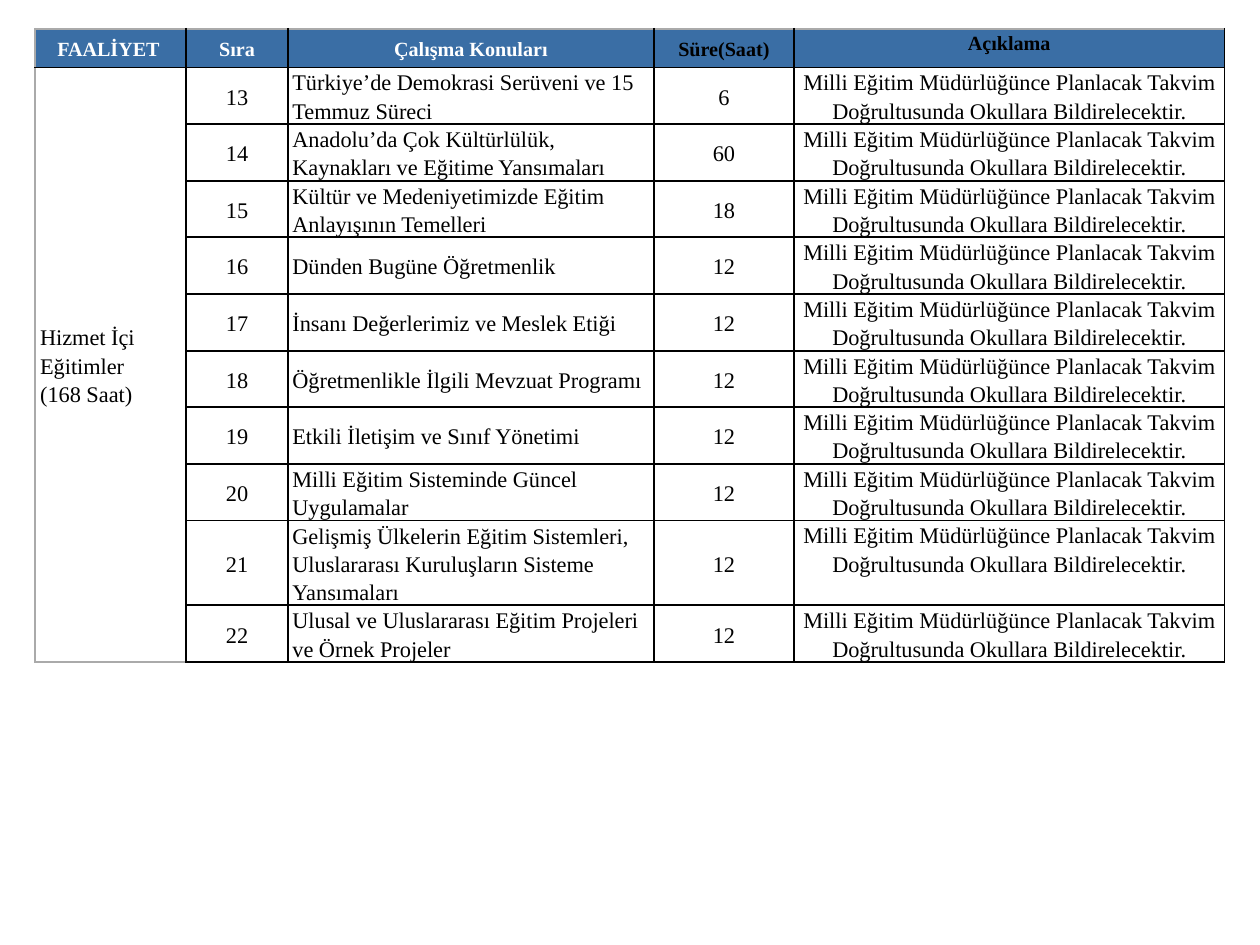
from lxml.etree import SubElement
from pptx import Presentation
from pptx.dml.color import RGBColor
from pptx.enum.text import MSO_ANCHOR, PP_ALIGN
from pptx.oxml.ns import qn
from pptx.util import Inches, Pt

COLORS = {"header": "3A6EA5", "white": "FFFFFF", "black": "000000", "gray": "AAAAAA"}
COLUMN_WIDTHS = [0.94, 0.63, 2.28, 0.87, 2.68]
HEADER_HEIGHT, ROW_HEIGHT, TALL_ROW_HEIGHT = 0.24, 0.35, 0.47
FIRST_NUMBER, TALL_NUMBER = 13, 21
HEADERS = ["FAALİYET\u00a0", "Sıra", "Çalışma Konuları", "Süre(Saat)", "Açıklama"]
ACTIVITY = "Hizmet İçi Eğitimler\n(168 Saat)"
NOTE = "Milli Eğitim Müdürlüğünce Planlacak Takvim Doğrultusunda Okullara Bildirelecektir."
TOPICS = [
    ("Türkiye’de Demokrasi Serüveni ve 15 Temmuz Süreci", 6),
    ("Anadolu’da Çok Kültürlülük, Kaynakları ve Eğitime Yansımaları", 60),
    ("Kültür ve Medeniyetimizde Eğitim Anlayışının Temelleri", 18),
    ("Dünden Bugüne Öğretmenlik", 12),
    ("İnsanı Değerlerimiz ve Meslek Etiği", 12),
    ("Öğretmenlikle İlgili Mevzuat Programı", 12),
    ("Etkili İletişim ve Sınıf Yönetimi", 12),
    ("Milli Eğitim Sisteminde Güncel Uygulamalar", 12),
    ("Gelişmiş Ülkelerin Eğitim Sistemleri, Uluslararası Kuruluşların Sisteme Yansımaları", 12),
    ("Ulusal ve Uluslararası Eğitim Projeleri ve Örnek Projeler", 12),
]


def add_border(cell, side, color):
    line = SubElement(cell._tc.get_or_add_tcPr(), qn(f"a:ln{side}"), w=str(Pt(1)))
    fill = SubElement(line, qn("a:solidFill"))
    SubElement(fill, qn("a:srgbClr"), val=COLORS[color])


def format_cell(cell, size, bold, color, alignment, anchor, fill):
    cell.margin_left = cell.margin_right = Inches(0.03)
    cell.margin_top = cell.margin_bottom = 0
    cell.vertical_anchor = anchor
    cell.fill.solid()
    cell.fill.fore_color.rgb = RGBColor.from_string(COLORS[fill])
    for paragraph in cell.text_frame.paragraphs:
        paragraph.alignment = alignment
        paragraph.line_spacing = 1.15
        for run in paragraph.runs:
            run.font.name = "Times New Roman"
            run.font.size = Pt(size)
            run.font.bold = bold
            run.font.color.rgb = RGBColor.from_string(COLORS[color])


presentation = Presentation()
presentation.slide_width = Inches(7.84)
presentation.slide_height = Inches(5.88)
slide = presentation.slides.add_slide(presentation.slide_layouts[6])

rows = [HEADERS]
row_heights = [HEADER_HEIGHT]
for number, (topic, hours) in enumerate(TOPICS, FIRST_NUMBER):
    activity = ACTIVITY if number == FIRST_NUMBER else ""
    rows.append([activity, str(number), topic, str(hours), NOTE])
    row_heights.append(TALL_ROW_HEIGHT if number == TALL_NUMBER else ROW_HEIGHT)

table = slide.shapes.add_table(
    len(rows), len(HEADERS), Inches(0.22), Inches(0.18),
    Inches(sum(COLUMN_WIDTHS)), Inches(sum(row_heights)),
).table
for column, width in zip(table.columns, COLUMN_WIDTHS):
    column.width = Inches(width)
for row, height in zip(table.rows, row_heights):
    row.height = Inches(height)

for row_index, texts in enumerate(rows):
    is_header = row_index == 0
    for column_index, text in enumerate(texts):
        cell = table.cell(row_index, column_index)
        cell.text_frame.text = text
        is_activity = column_index == 0 and not is_header
        add_border(cell, "L", "gray" if column_index == 0 else "black")
        add_border(cell, "R", "black")
        add_border(cell, "T", "gray" if is_header else "black")
        add_border(cell, "B", "gray" if is_activity else "black")
        format_cell(
            cell,
            size=9 if is_header else 10,
            bold=is_header,
            color="white" if is_header and column_index < 3 else "black",
            alignment=PP_ALIGN.LEFT if not is_header and column_index in (0, 2) else PP_ALIGN.CENTER,
            anchor=MSO_ANCHOR.TOP if column_index == 4 else MSO_ANCHOR.MIDDLE,
            fill="header" if is_header else "white",
        )

table.cell(1, 0).merge(table.cell(len(TOPICS), 0))

presentation.save("out.pptx")
